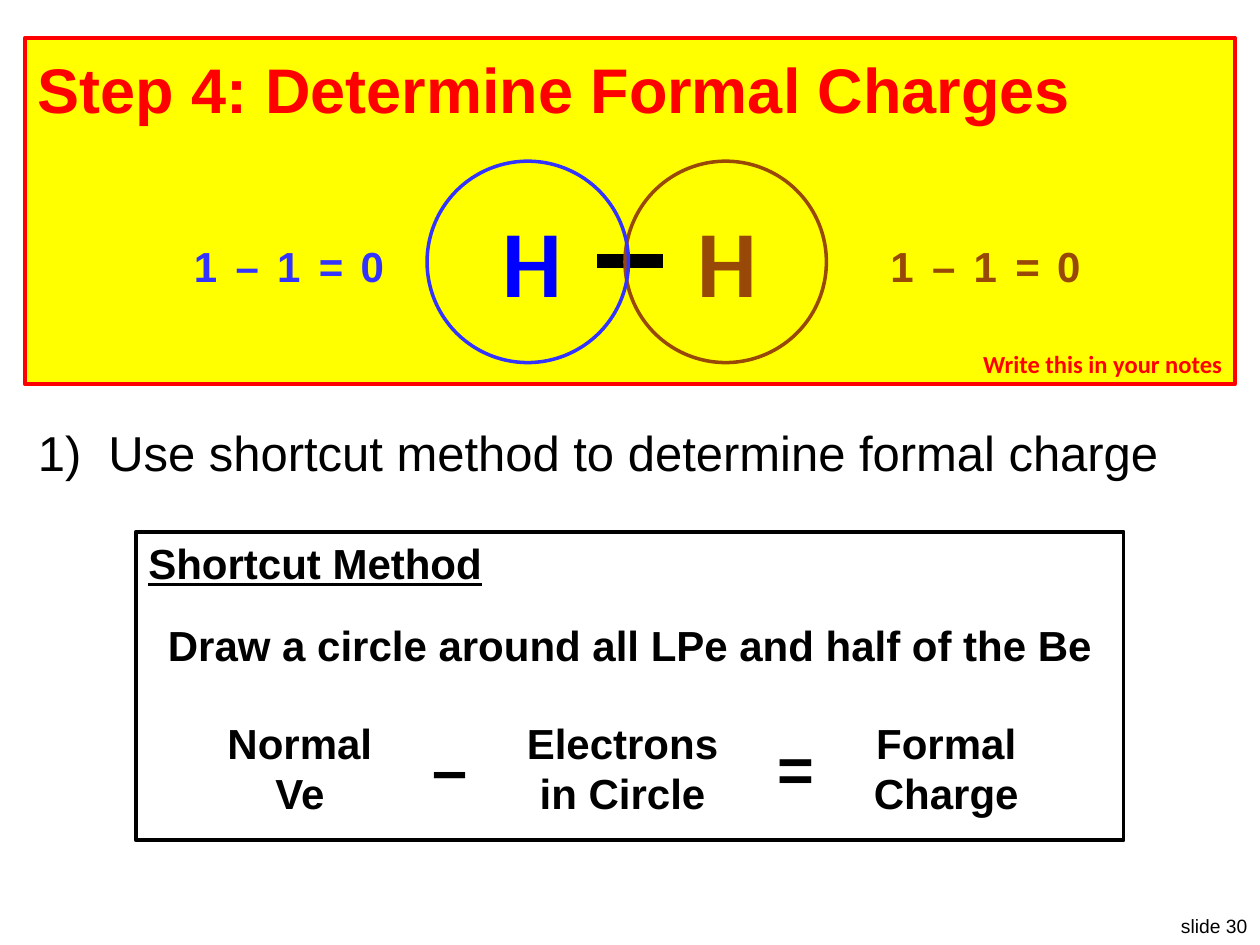
"""Build the slide on finding formal charges in a hydrogen molecule."""
import pptx
import pptx.dml.color
import pptx.enum.shapes
import pptx.enum.text
import pptx.oxml.xmlchemy
import pptx.util
import lxml.etree

Cm = pptx.util.Cm
Pt = pptx.util.Pt
RGBColor = pptx.dml.color.RGBColor
SHAPE = pptx.enum.shapes.MSO_SHAPE
ALIGN = pptx.enum.text.PP_ALIGN
ANCHOR = pptx.enum.text.MSO_ANCHOR
FIT = pptx.enum.text.MSO_AUTO_SIZE

RED = RGBColor(0xFF, 0x00, 0x00)
YELLOW = RGBColor(0xFF, 0xFF, 0x00)
BLACK = RGBColor(0x00, 0x00, 0x00)
BROWN = RGBColor(0x98, 0x48, 0x07)
BLUE = RGBColor(0x00, 0x00, 0xFF)
INDIGO = RGBColor(0x33, 0x33, 0xFF)
SPACE = "http://schemas.openxmlformats.org/drawingml/2006/main"


def write(shape, text, size=24, color=BLACK, font="Arial", bold=True, line=None,
          align=ALIGN.LEFT, anchor=ANCHOR.TOP, wrap=True, fit=FIT.NONE, inset=None):
    frame = shape.text_frame
    frame.text = text
    frame.word_wrap = wrap
    frame.auto_size = fit
    frame.vertical_anchor = anchor
    if inset is not None:
        frame.margin_left = frame.margin_right = inset
        frame.margin_top = frame.margin_bottom = inset
    for para in frame.paragraphs:
        para.alignment = align
        for run in para.runs:
            run.font.name = font
            run.font.size = Pt(size)
            run.font.bold = bold
            run.font.underline = line
            run.font.color.rgb = color


def frame_shape(kind, left, top, width, height, color, weight, fill=None):
    shape = shapes.add_shape(kind, Cm(left), Cm(top), Cm(width), Cm(height))
    shape.shadow.inherit = False
    shape.line.color.rgb = color
    shape.line.width = Pt(weight)
    if fill is None:
        shape.fill.background()
    else:
        shape.fill.solid()
        shape.fill.fore_color.rgb = fill
    return shape


deck = pptx.Presentation()
deck.slide_width = Cm(25.4)
deck.slide_height = Cm(19.05)
slide = deck.slides.add_slide(deck.slide_layouts[1])
shapes = slide.shapes
title = shapes.title
body = slide.placeholders[1]

panel = frame_shape(SHAPE.RECTANGLE, 0.51, 0.76, 24.38, 6.99, RED, 2.25, YELLOW)
write(panel, "Write this in your notes", size=14, color=RED, font="Calibri",
      align=ALIGN.RIGHT, anchor=ANCHOR.BOTTOM)
method = frame_shape(SHAPE.RECTANGLE, 2.74, 10.72, 19.91, 6.22, BLACK, 2.25)
write(method, "Shortcut Method", line=True)

for holder, top, height in ((title, 0.76, 2.03), (body, 8.38, 10.03)):
    holder.left, holder.top = Cm(0.51), Cm(top)
    holder.width, holder.height = Cm(24.38), Cm(height)
    shapes._spTree.append(holder._element)
write(title, "Step 4: Determine Formal Charges", size=36, color=RED, anchor=ANCHOR.MIDDLE)
write(body, "Use shortcut method to determine formal charge", size=28, bold=False)
item = body.text_frame.paragraphs[0]
item.space_before = Pt(12)
props = item._p.get_or_add_pPr()
props.set("marL", str(Cm(1.42)))
props.set("indent", str(-Cm(1.42)))
lxml.etree.SubElement(props, f"{{{SPACE}}}buFont", typeface="Arial")
lxml.etree.SubElement(props, f"{{{SPACE}}}buAutoNum", type="arabicParenR")

for left, color in ((14.05, BROWN), (10.13, BLUE)):
    atom = shapes.add_textbox(Cm(left), Cm(4.09), Cm(1.22), Cm(2.31))
    write(atom, "H", size=54, color=color, font="Calibri", align=ALIGN.CENTER,
          wrap=False, fit=FIT.SHAPE_TO_FIT_TEXT, inset=0)

bond = shapes.add_connector(pptx.enum.shapes.MSO_CONNECTOR.STRAIGHT,
                            Cm(13.36), Cm(5.26), Cm(12.04), Cm(5.26))
bond.line.color.rgb = BLACK
bond.line.width = Pt(8)
lxml.etree.SubElement(bond._element.spPr, f"{{{SPACE}}}effectLst")

for left, color in ((12.6, BROWN), (8.61, INDIGO)):
    frame_shape(SHAPE.OVAL, left, 3.25, 4.06, 4.06, color, 2)

for start, color in ((17.7, BROWN), (3.66, INDIGO)):
    for step, sign in enumerate("1–1=0"):
        term = shapes.add_textbox(Cm(start + 0.84 * step), Cm(4.72), Cm(1), Cm(1.27))
        write(term, sign, color=color, wrap=False, fit=FIT.SHAPE_TO_FIT_TEXT)

for text, left, top, width, height, size in (
    ("Normal\nVe", 4.32, 14.33, 3.45, 2.31, 24),
    ("–", 8.46, 14.58, 1.22, 1.8, 36),
    ("Electrons\nin Circle", 10.34, 14.33, 4.42, 2.31, 24),
    ("=", 15.42, 14.58, 1.27, 1.8, 36),
    ("Formal\nCharge", 17.35, 14.33, 3.45, 2.31, 24),
    ("Draw a circle around all LPe and half of the Be", 3.05, 12.37, 19.3, 1.27, 24),
):
    part = shapes.add_textbox(Cm(left), Cm(top), Cm(width), Cm(height))
    write(part, text, size=size, align=ALIGN.CENTER, wrap=False, fit=FIT.SHAPE_TO_FIT_TEXT)

number = shapes.add_textbox(Cm(23.5), Cm(18.31), Cm(1.9), Cm(0.74))
write(number, "slide 30", size=11, bold=False, align=ALIGN.RIGHT, wrap=False,
      fit=FIT.SHAPE_TO_FIT_TEXT)

deck.save("out.pptx")
